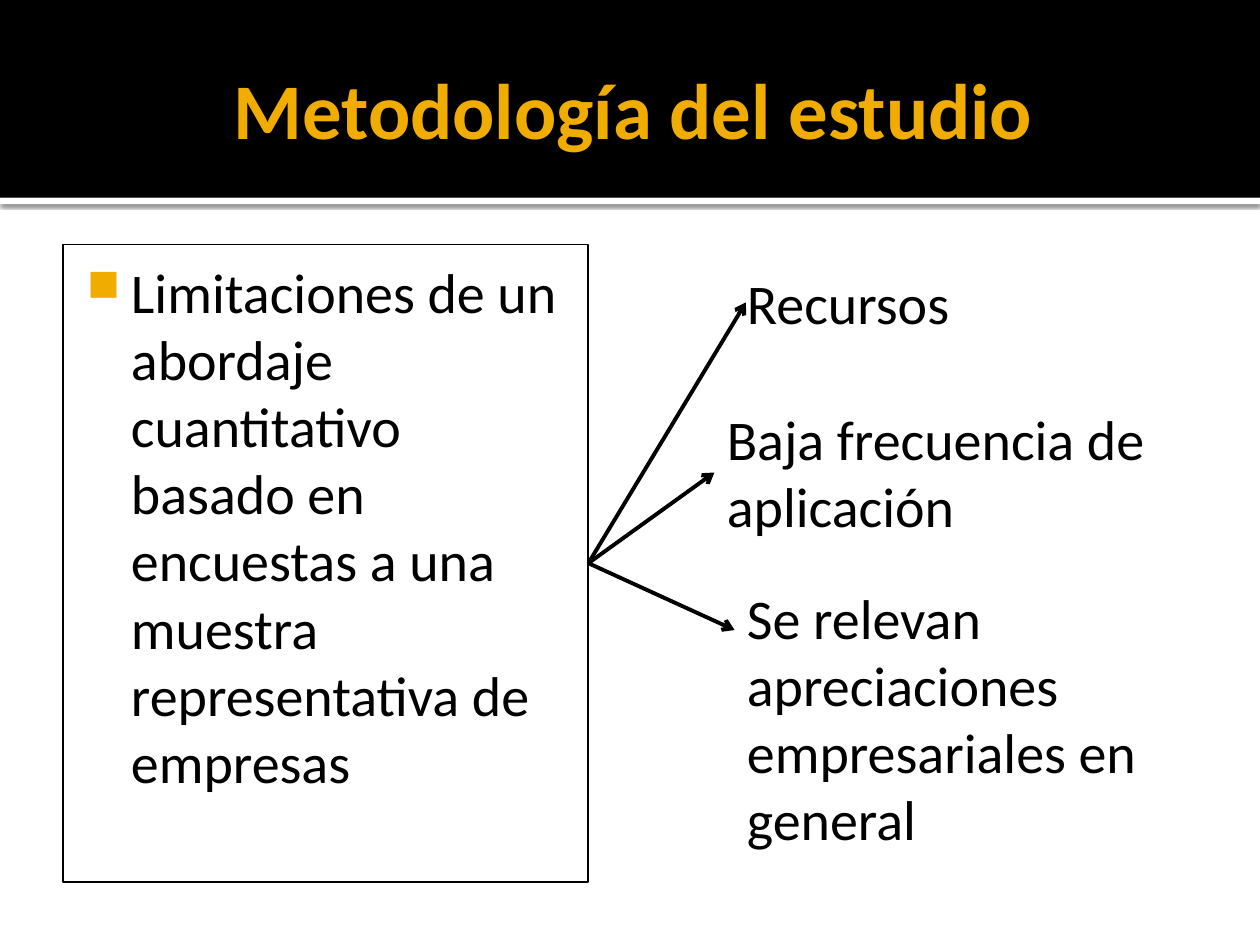
from lxml import etree
from pptx import Presentation
from pptx.dml.color import RGBColor
from pptx.enum.shapes import MSO_CONNECTOR, MSO_SHAPE
from pptx.enum.text import MSO_ANCHOR, PP_ALIGN
from pptx.oxml import parse_xml
from pptx.oxml.ns import nsdecls, qn
from pptx.util import Inches, Pt

BLACK = RGBColor(0, 0, 0)
WHITE = RGBColor(255, 255, 255)
GOLD = RGBColor(0xF0, 0xAD, 0x00)
FONT = "Calibri"


def style(para, size, color, bold=False):
    font = para.font
    font.name, font.size, font.bold = FONT, Pt(size), bold
    font.color.rgb = color


def inset(frame, left, top, right, bottom):
    frame.margin_left, frame.margin_top = Inches(left), Inches(top)
    frame.margin_right, frame.margin_bottom = Inches(right), Inches(bottom)


deck = Presentation()
deck.slide_width, deck.slide_height = Inches(10), Inches(7.5)
slide = deck.slides.add_slide(deck.slide_layouts[5])
shapes = slide.shapes
title = shapes.title

# Header: white strip with a shadow, then the black band, both behind the title
for top, height, color in [(1.57, 0.05, WHITE), (0, 1.57, BLACK)]:
    band = shapes.add_shape(MSO_SHAPE.RECTANGLE, 0, Inches(top), Inches(10), Inches(height))
    band.shadow.inherit = False
    band.fill.solid()
    band.fill.fore_color.rgb = color
    band.line.fill.background()
    title._element.addprevious(band._element)
    if color == WHITE:
        glow = band._element.spPr.find(qn("a:effectLst"))
        glow.append(parse_xml(
            f'<a:outerShdw {nsdecls("a")} blurRad="{Pt(2.5)}" dist="{Pt(0.8)}" dir="5400000"'
            ' algn="t" rotWithShape="0"><a:srgbClr val="000000"><a:alpha val="60000"/>'
            '</a:srgbClr></a:outerShdw>'))

# Title
title.left, title.top = Inches(0.5), Inches(0.17)
title.width, title.height = Inches(9), Inches(1.37)
frame = title.text_frame
frame.text = "Metodología del estudio"
frame.vertical_anchor = MSO_ANCHOR.MIDDLE
inset(frame, 0.1, 0.05, 0.05, 0.05)
frame.paragraphs[0].alignment = PP_ALIGN.CENTER
style(frame.paragraphs[0], 45, GOLD, True)

# Framed statement with a square bullet
box = shapes.add_shape(MSO_SHAPE.RECTANGLE, Inches(0.5), Inches(1.94), Inches(4.17), Inches(5.06))
box.shadow.inherit = False
box.fill.background()
box.line.color.rgb = BLACK
box.line.width = Pt(1)
frame = box.text_frame
frame.word_wrap = True
frame.vertical_anchor = MSO_ANCHOR.TOP
inset(frame, 0.06, 0.1, 0.1, 0.05)
para = frame.paragraphs[0]
para.text = ("Limitaciones de un abordaje cuantitativo basado en encuestas"
             " a una muestra representativa de empresas")
para.alignment = PP_ALIGN.LEFT
style(para, 32, BLACK)
props = para._p.get_or_add_pPr()
props.set("marL", str(Inches(0.48)))
props.set("indent", str(Inches(-0.35)))
bullet = [parse_xml(f'<a:buClr {nsdecls("a")}><a:srgbClr val="{GOLD}"/></a:buClr>'),
          parse_xml(f'<a:buSzPct {nsdecls("a")} val="80000"/>'),
          parse_xml(f'<a:buChar {nsdecls("a")} char="■"/>')]
for place, part in enumerate(bullet):
    props.insert(place, part)

# Limitations: text, its place and the tip of its arrow
limits = [
    ("Recursos", 5.83, 2.08, 3.58, 0.64, 5.92, 2.4),
    ("Baja frecuencia de aplicación", 5.67, 3.16, 4, 1.18, 5.67, 3.75),
    ("Se relevan apreciaciones empresariales en general", 5.83, 4.58, 3.83, 2.26, 5.83, 5),
]
for text, left, top, width, height, tipx, tipy in limits:
    note = shapes.add_textbox(Inches(left), Inches(top), Inches(width), Inches(height))
    note.text_frame.word_wrap = True
    para = note.text_frame.paragraphs[0]
    para.text = text
    style(para, 32, BLACK)

    arrow = shapes.add_connector(MSO_CONNECTOR.STRAIGHT, Inches(4.67), Inches(4.47),
                                 Inches(tipx), Inches(tipy))
    arrow.line.color.rgb = BLACK
    arrow.line.width = Pt(2.25)
    etree.SubElement(arrow.line._get_or_add_ln(), qn("a:tailEnd"), type="arrow")
    etree.SubElement(arrow._element.spPr, qn("a:effectLst"))

deck.save("out.pptx")
